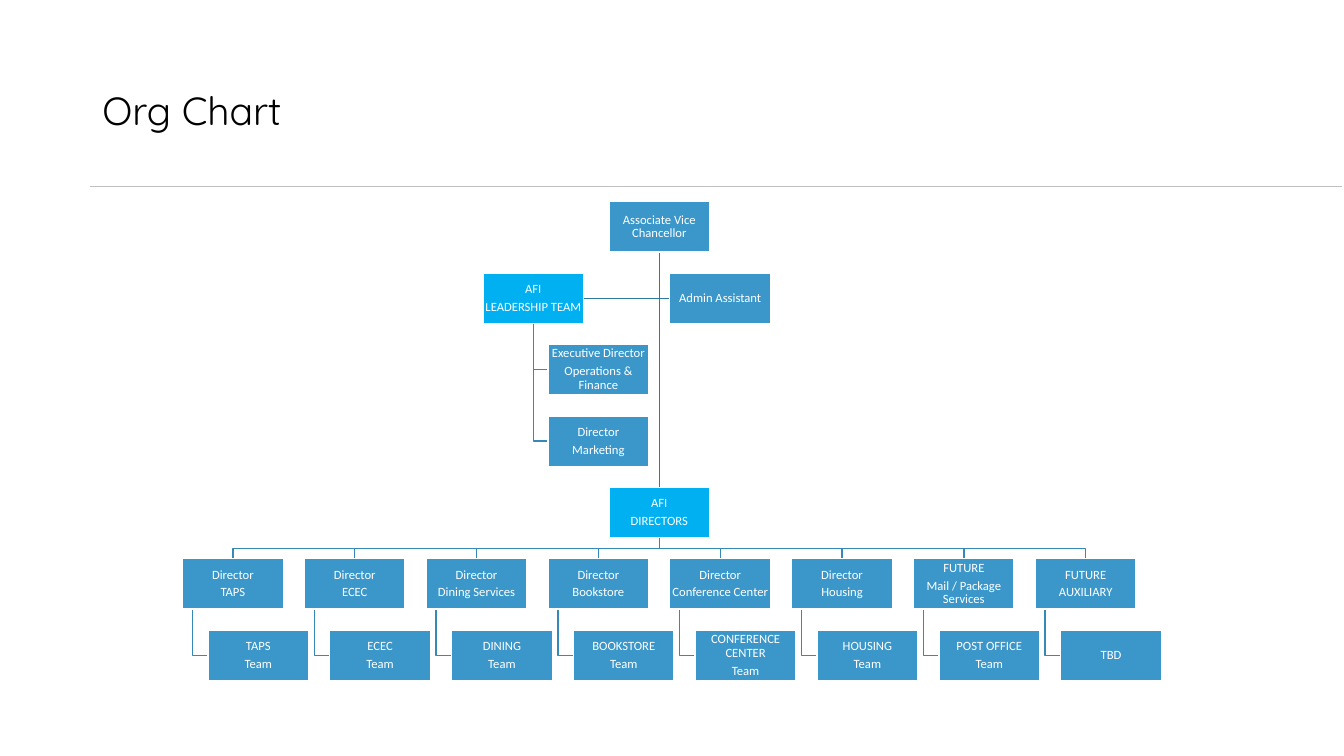
from dataclasses import dataclass

import pptx
import pptx.dml.color
import pptx.enum.shapes
import pptx.enum.text
import pptx.util
from lxml import etree
from pptx.oxml.ns import qn

Cm = pptx.util.Cm
Pt = pptx.util.Pt

COLORS = {
    "box": "3B97C9",
    "accent": "00B0F0",
    "trunk": "2F79A1",
    "branch": "3689B6",
    "rule": "BFBFBF",
    "title": "000000",
    "white": "FFFFFF",
}

# Grid, in centimetres
BOX_WIDTH, BOX_HEIGHT = 2.54, 1.27
FIRST_LEFT, COLUMN_STEP = 4.6, 3.07
FIRST_TOP, ROW_STEP = 5.08, 1.8
TEAM_INDENT, TEAM_STEM = 0.64, 0.25

Point = tuple[float, float]


@dataclass
class Position:
    """One box of the chart; left in centimetres, row counted from the top."""
    lines: list[str]
    left: float
    row: int
    color: str = "box"

    @property
    def top(self) -> float:
        return FIRST_TOP + self.row * ROW_STEP

    @property
    def bottom(self) -> float:
        return self.top + BOX_HEIGHT

    @property
    def middle(self) -> float:
        return self.top + BOX_HEIGHT / 2

    @property
    def center(self) -> float:
        return self.left + BOX_WIDTH / 2

    @property
    def right(self) -> float:
        return self.left + BOX_WIDTH


def column_left(index: float) -> float:
    return FIRST_LEFT + index * COLUMN_STEP


def rgb(name: str) -> pptx.dml.color.RGBColor:
    return pptx.dml.color.RGBColor.from_string(COLORS[name])


def style_font(font, name: str, size: float, color: str) -> None:
    font.name = name
    font.size = Pt(size)
    font.color.rgb = rgb(color)


def draw_line(page, start: Point, end: Point, color: str, width: float) -> None:
    line = page.shapes.add_connector(
        pptx.enum.shapes.MSO_CONNECTOR.STRAIGHT,
        Cm(start[0]), Cm(start[1]), Cm(end[0]), Cm(end[1]))
    line.line.color.rgb = rgb(color)
    line.line.width = Pt(width)
    etree.SubElement(line._element.spPr, qn("a:effectLst"))


def draw_elbow(page, points: list[Point], color: str) -> None:
    start, *others = [(Cm(x), Cm(y)) for x, y in points]
    builder = page.shapes.build_freeform(*start)
    builder.add_line_segments(others, close=False)
    elbow = builder.convert_to_shape()
    elbow.shadow.inherit = False
    elbow.fill.background()
    elbow.line.color.rgb = rgb(color)
    elbow.line.width = Pt(1)


def draw_position(page, position: Position) -> None:
    box = page.shapes.add_shape(
        pptx.enum.shapes.MSO_SHAPE.RECTANGLE,
        Cm(position.left), Cm(position.top), Cm(BOX_WIDTH), Cm(BOX_HEIGHT))
    box.shadow.inherit = False
    box.fill.solid()
    box.fill.fore_color.rgb = rgb(position.color)
    box.line.color.rgb = rgb("white")
    box.line.width = Pt(1)
    frame = box.text_frame
    frame.word_wrap = True
    frame.vertical_anchor = pptx.enum.text.MSO_ANCHOR.MIDDLE
    frame.margin_left = frame.margin_right = Cm(0.02)
    frame.margin_top = frame.margin_bottom = Cm(0.02)
    frame.text = "\n".join(position.lines)
    for para in frame.paragraphs:
        para.alignment = pptx.enum.text.PP_ALIGN.CENTER
        para.line_spacing = 0.9
        for span in para.runs:
            style_font(span.font, "Calibri", 9, "white")
    for para in frame.paragraphs[1:]:
        para.space_before = Pt(3)


def draw_title(page, text: str) -> None:
    box = page.shapes.add_textbox(Cm(2.33), Cm(1.01), Cm(29.21), Cm(3.68))
    frame = box.text_frame
    frame.word_wrap = True
    frame.vertical_anchor = pptx.enum.text.MSO_ANCHOR.MIDDLE
    frame.text = text
    para = frame.paragraphs[0]
    para.line_spacing = 0.9
    style_font(para.runs[0].font, "Quicksand", 28, "title")


# Leadership
MIDDLE_LEFT = column_left(3.5)
chancellor = Position(["Associate Vice Chancellor"], MIDDLE_LEFT, 0)
leadership = Position(["AFI", "LEADERSHIP TEAM"], 12.17, 1, "accent")
assistant = Position(["Admin Assistant"], column_left(4), 1)
leaders = [
    Position(["Executive Director", "Operations & Finance"], column_left(3), 2),
    Position(["Director", "Marketing"], column_left(3), 3),
]
head = Position(["AFI", "DIRECTORS"], MIDDLE_LEFT, 4, "accent")

# Each director with the team below
DEPARTMENTS = [
    (["Director", "TAPS"], ["TAPS", "Team"]),
    (["Director", "ECEC"], ["ECEC", "Team"]),
    (["Director", "Dining Services"], ["DINING", "Team"]),
    (["Director", "Bookstore"], ["BOOKSTORE", "Team"]),
    (["Director", "Conference Center"], ["CONFERENCE CENTER", "Team"]),
    (["Director", "Housing"], ["HOUSING", "Team"]),
    (["FUTURE", "Mail / Package Services"], ["POST OFFICE", "Team"]),
    (["FUTURE", "AUXILIARY"], ["TBD"]),
]
directors = [Position(lines, column_left(i), 5)
             for i, (lines, _) in enumerate(DEPARTMENTS)]
teams = [Position(lines, column_left(i) + TEAM_INDENT, 6)
         for i, (_, lines) in enumerate(DEPARTMENTS)]


def draw_links(page) -> None:
    trunk = (chancellor.center, chancellor.bottom)
    for end in (assistant.left, leadership.right):
        corner = (chancellor.center, assistant.middle)
        draw_elbow(page, [trunk, corner, (end, assistant.middle)], "trunk")
    draw_line(page, trunk, (head.center, head.top), "trunk", 1)

    stems = [(leadership, leadership.center, leader) for leader in leaders]
    stems += [(director, director.left + TEAM_STEM, team)
              for director, team in zip(directors, teams)]
    for parent, x, child in stems:
        draw_elbow(page, [(x, parent.bottom), (x, child.middle),
                          (child.left, child.middle)], "branch")

    for director in directors:
        bus = (head.bottom + director.top) / 2
        draw_elbow(page, [(head.center, head.bottom), (head.center, bus),
                          (director.center, bus),
                          (director.center, director.top)], "branch")


def main() -> None:
    deck = pptx.Presentation()
    deck.slide_width, deck.slide_height = Cm(33.87), Cm(19.05)
    page = deck.slides.add_slide(deck.slide_layouts[6])

    # Heading
    draw_line(page, (2.27, 4.7), (33.81, 4.7), "rule", 0.5)
    draw_title(page, "Org Chart")

    # Chart: links behind, boxes in front
    draw_links(page)
    for position in [chancellor, head, *directors, *teams,
                     leadership, *leaders, assistant]:
        draw_position(page, position)

    deck.save("out.pptx")


if __name__ == "__main__":
    main()
